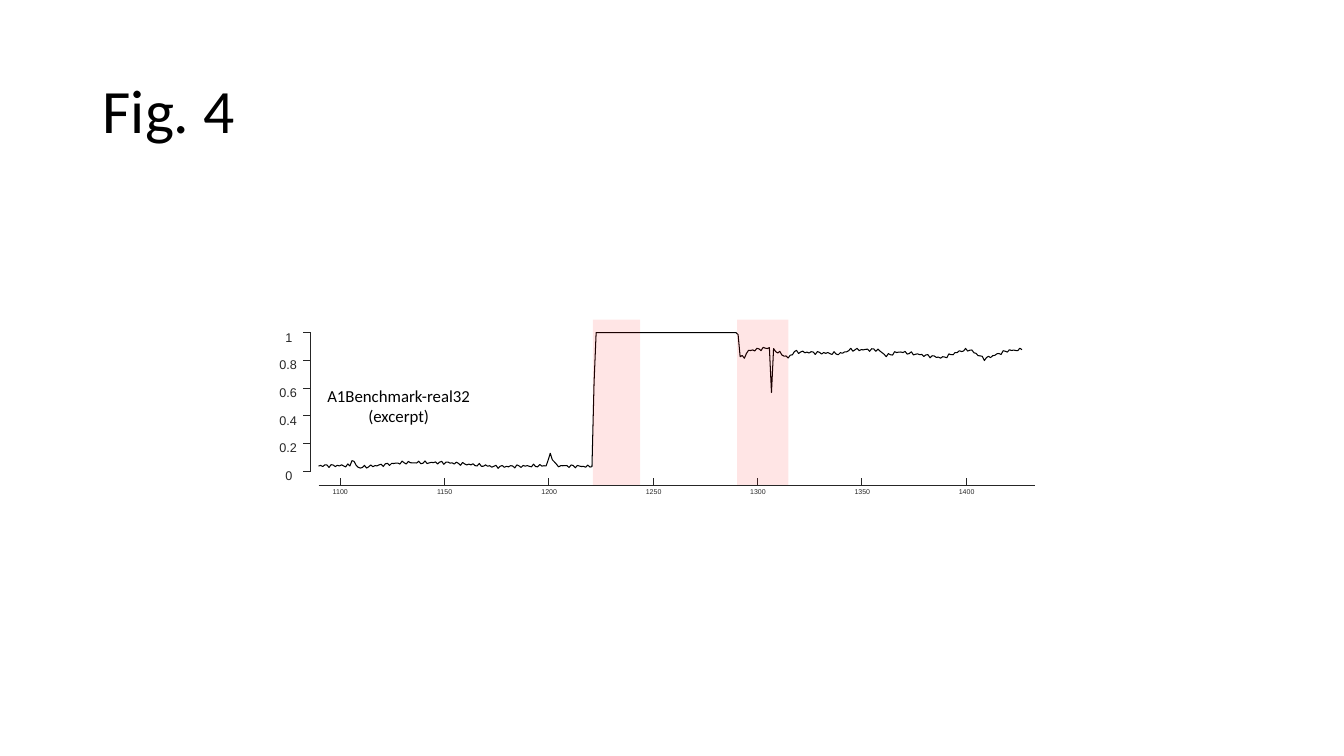
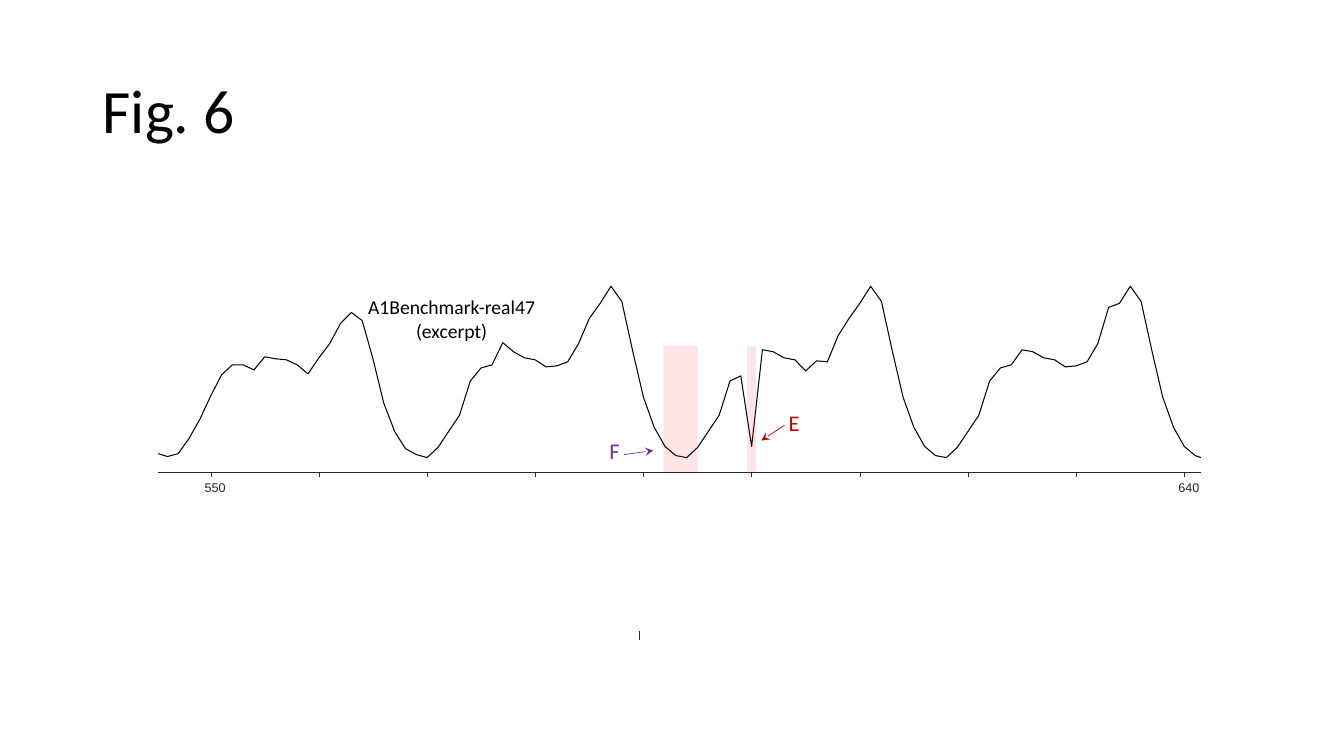
from math import sin

from lxml import etree
from pptx import Presentation
from pptx.dml.color import RGBColor
from pptx.enum.shapes import MSO_CONNECTOR, MSO_SHAPE
from pptx.enum.text import MSO_ANCHOR, MSO_AUTO_SIZE, PP_ALIGN
from pptx.oxml.ns import qn
from pptx.util import Pt

PX = 9144
LINE = MSO_CONNECTOR.STRAIGHT
RECT = MSO_SHAPE.RECTANGLE
TOP, MIDDLE = MSO_ANCHOR.TOP, MSO_ANCHOR.MIDDLE
LEFT, CENTER = PP_ALIGN.LEFT, PP_ALIGN.CENTER
FIT, FIXED = MSO_AUTO_SIZE.SHAPE_TO_FIT_TEXT, MSO_AUTO_SIZE.NONE

COLORS = {
    "ink": "000000",
    "axis": "262626",
    "band": "FF0000",
    "purple": "7030A0",
    "red": "C00000",
}

KNOTS = [
    (1090, 132), (1105, 132), (1106, 126), (1109, 134), (1130, 129),
    (1152, 129), (1175, 133), (1199, 132), (1201, 121), (1204, 132),
    (1221, 133), (1222, 49), (1223, 0), (1290, 0), (1291, 2), (1292, 24),
    (1294, 24), (1296, 18), (1306, 15), (1307, 59), (1308, 17), (1315, 25),
    (1318, 19), (1340, 21), (1345, 17), (1358, 17), (1362, 23), (1368, 19),
    (1389, 25), (1398, 18), (1402, 17), (1409, 26), (1420, 18), (1427, 17),
]

FIRST = [171, 168, 153, 134, 111, 90, 80, 80, 85, 72, 74, 75,
         80, 89, 73, 59, 39, 28, 36, 74, 118, 146, 163, 169]
CYCLE = [172, 162, 146, 130, 96, 83, 80, 65, 67, 73, 75, 82,
         81, 77, 59, 34, 19, 2, 17, 66, 112, 142, 161, 170]
ODD = {31: 58, 53: 91, 54: 161, 59: 86, 60: 76, 62: 51, 87: 23}


def emu(*sizes):
    return [round(size * PX) for size in sizes]


def paint(name):
    return RGBColor.from_string(COLORS[name])


def text(slide, box, words, size=9, font="Arial", color="axis", align=LEFT,
         anchor=TOP, wrap=False, pad=(0, 0), fit=FIT, lead=None):
    shape = slide.shapes.add_textbox(*emu(*box))
    frame = shape.text_frame
    frame.word_wrap = wrap
    frame.auto_size = fit
    frame.vertical_anchor = anchor
    frame.margin_left = frame.margin_right = pad[0] * PX
    frame.margin_top = frame.margin_bottom = pad[1] * PX
    for i, row in enumerate(words.split("\n")):
        para = frame.paragraphs[0] if i == 0 else frame.add_paragraph()
        para.alignment = align
        para.line_spacing = lead
        run = para.add_run()
        run.text = row
        run.font.size = Pt(size)
        run.font.name = font
        run.font.color.rgb = paint(color)


def line(slide, x1, y1, x2, y2, color="axis", width=0.25, head=False):
    shape = slide.shapes.add_connector(LINE, *emu(x1, y1, x2, y2))
    shape.line.color.rgb = paint(color)
    shape.line.width = Pt(width)
    if head:
        edge = shape._element.spPr.find(qn("a:ln"))
        etree.SubElement(edge, qn("a:tailEnd")).set("type", "stealth")
    etree.SubElement(shape._element.spPr, qn("a:effectLst"))


def band(slide, x, y, w, h):
    shape = slide.shapes.add_shape(RECT, *emu(x, y, w, h))
    shape.shadow.inherit = False
    shape.line.fill.background()
    shape.fill.solid()
    shape.fill.fore_color.rgb = paint("band")
    tint = shape._element.spPr.find(".//" + qn("a:srgbClr"))
    etree.SubElement(tint, qn("a:alpha")).set("val", "10000")


def curve(slide, points):
    spots = [tuple(emu(*point)) for point in points]
    maker = slide.shapes.build_freeform(*spots[0], scale=1.0)
    maker.add_line_segments(spots[1:], close=False)
    shape = maker.convert_to_shape()
    shape.shadow.inherit = False
    shape.fill.background()
    shape.line.color.rgb = paint("ink")
    shape.line.width = Pt(0.75)


def trace(x, y, gap, depths):
    return [(x + i * gap, y + depth) for i, depth in enumerate(depths)]


def noise(time):
    if 1221 <= time <= 1292:
        return 0
    return sin(time * 2.4) + 0.8 * sin(time * 1.7)


def steps():
    depths = []
    for (t1, d1), (t2, d2) in zip(KNOTS, KNOTS[1:]):
        for time in range(t1, t2):
            part = (time - t1) / (t2 - t1)
            depths.append(d1 + (d2 - d1) * part + noise(time))
    return depths + [KNOTS[-1][1]]


def waves():
    depths = FIRST + CYCLE * 3
    return [ODD.get(i, depth) for i, depth in enumerate(depths)]


def title(slide, words):
    text(slide, (92, 40, 1150, 145), words, size=44, font="Calibri",
         color="ink", anchor=MIDDLE, wrap=True, pad=(10, 5), fit=FIXED,
         lead=0.9)


def label(slide, box, words, size):
    text(slide, box, words, size=size, font="Calibri", color="ink",
         align=CENTER, wrap=True, pad=(10, 5))


def mark(slide, x, y, words, color, arrow):
    line(slide, *arrow, color=color, width=0.5, head=True)
    text(slide, (x, y, 35, 27), words, size=16, font="Calibri", color=color,
         align=CENTER, wrap=True)


def scale(slide, x, y):
    line(slide, x, y + 137, x, y)
    for i, value in enumerate(["1", "0.8", "0.6", "0.4", "0.2", "0"]):
        spot = y + i * 27.4
        line(slide, x - 7, spot, x, spot)
        left, wide = (25, 7) if len(value) == 1 else (31, 18)
        text(slide, (x - left, spot - 3, wide, 15), value)


def jump(slide, x, y, w, h):
    gap = 2.07
    base = y + h
    for i in range(7):
        spot = x + 21 + i * 50 * gap
        line(slide, spot, base, spot, base - 7)
        text(slide, (spot - 7, base + 3, 19, 9), str(1100 + i * 50), size=5)
    scale(slide, x - 8, y + 13)
    curve(slide, trace(x, y + 13, gap, steps()))
    for left, wide in [(272, 47), (415, 51)]:
        band(slide, x + left, y, wide, h)
    label(slide, (x - 7, y + 61, 173, 50), "A1Benchmark-real32\n(excerpt)", 12)
    line(slide, x, base, x + w, base)


def cycle(slide, x, y, w, h):
    gap = 10.73
    base = y + h
    line(slide, x, base, x + w, base)
    for i in range(10):
        spot = x + 52 + i * 10 * gap
        line(slide, spot, base + 5, spot, base)
        if i in (0, 9):
            text(slide, (spot - 6, base + 8, 21, 15), str(550 + i * 10))
    points = trace(x + 52 - 4 * gap, y, gap, waves())
    curve(slide, [(x, y + 168)] + points + [(x + w, y + 172)])
    for left, wide in [(501, 34), (584, 9)]:
        band(slide, x + left, y + 61, wide, 126)
    label(slide, (x + 194, y + 6, 194, 57), "A1Benchmark-real47\n(excerpt)", 14)
    mark(slide, x + 435, y + 152, "F", "purple",
         (x + 462, y + 169, x + 491, y + 165))
    mark(slide, x + 613, y + 124, "E", "red",
         (x + 621, y + 140, x + 598, y + 155))


def main():
    deck = Presentation()
    deck.slide_width, deck.slide_height = emu(1333, 750)
    blank = deck.slide_layouts[6]

    slide = deck.slides.add_slide(blank)
    jump(slide, 316, 317, 711, 164)
    title(slide, "Fig. 4")

    slide = deck.slides.add_slide(blank)
    line(slide, 634, 635, 634, 626)
    cycle(slide, 157, 282, 1034, 186)
    title(slide, "Fig. 6")

    deck.save("out.pptx")


if __name__ == "__main__":
    main()
